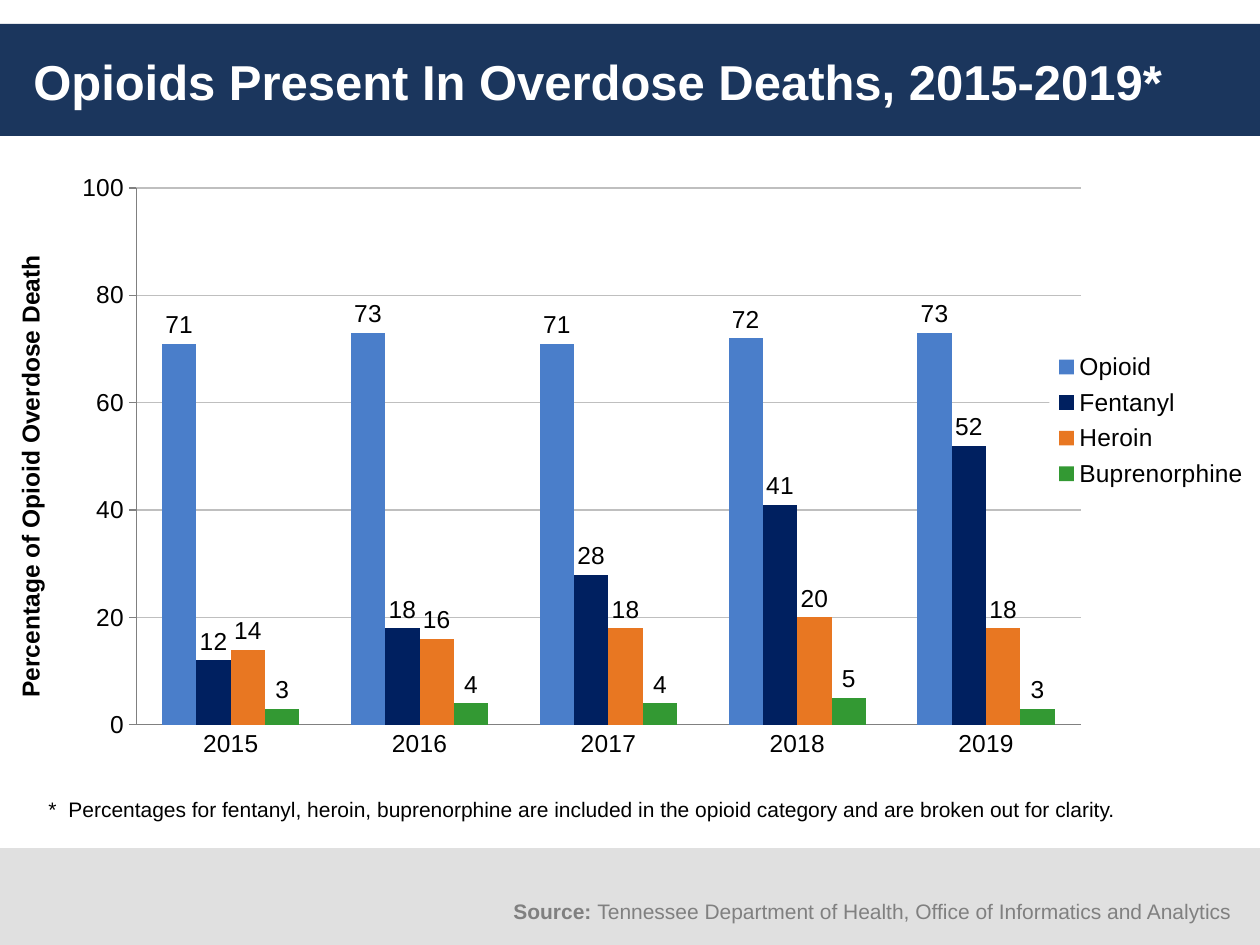
"""Build the slide on opioids present in overdose deaths."""
import pptx
import pptx.chart.data
import pptx.dml.color
import pptx.enum.chart
import pptx.enum.shapes
import pptx.enum.text
import pptx.oxml
import pptx.oxml.ns
import pptx.util

RGBColor = pptx.dml.color.RGBColor
ANCHOR = pptx.enum.text.MSO_ANCHOR
ALIGN = pptx.enum.text.PP_ALIGN
XL = pptx.enum.chart

NAVY = RGBColor(0x1B, 0x36, 0x5D)
PALE = RGBColor(0xE0, 0xE0, 0xE0)
WHITE = RGBColor(0xFF, 0xFF, 0xFF)
BLACK = RGBColor(0, 0, 0)
GRAY = RGBColor(0x80, 0x80, 0x80)
GRID = RGBColor(0xBF, 0xBF, 0xBF)

BANDS = [((0, 24, 1260, 112), NAVY), ((0, 848, 1260, 97), PALE)]
TEXTS = [
    {"box": (21, 24, 1218, 113), "size": 28, "color": WHITE, "anchor": ANCHOR.MIDDLE,
     "runs": [("Opioids Present In Overdose Deaths, 2015-2019*", True)]},
    {"box": (36, 790, 1103, 38), "size": 12, "color": BLACK, "hang": 20,
     "runs": [("*\tPercentages for fentanyl, heroin, buprenorphine are included in "
               "the opioid category and are broken out for clarity.", False)]},
    {"box": (9, 190, 55, 573), "size": 14, "color": BLACK, "align": ALIGN.CENTER,
     "vert": "vert270", "runs": [("Percentage of Opioid Overdose Death", True)]},
    {"box": (501, 892, 756, 38), "size": 12, "color": GRAY,
     "runs": [("Source: ", True),
              ("Tennessee Department of Health, Office of Informatics and Analytics", False)]},
]
YEARS = ["2015", "2016", "2017", "2018", "2019"]
SERIES = [
    ("Opioid", (71, 73, 71, 72, 73), RGBColor(0x4A, 0x7E, 0xCA)),
    ("Fentanyl", (12, 18, 28, 41, 52), RGBColor(0x00, 0x20, 0x60)),
    ("Heroin", (14, 16, 18, 20, 18), RGBColor(0xE8, 0x77, 0x22)),
    ("Buprenorphine", (3, 4, 4, 5, 3), RGBColor(0x33, 0x99, 0x33)),
]
CHART_BOX = (9, 165, 1249, 683)
PLOT_BOX = (136, 188, 944, 537)
LEGEND_BOX = (1050, 345, 204, 150)


def px(n):
    return pptx.util.Emu(n * 914400 // 126)


def style(obj, **values):
    for name, value in values.items():
        setattr(obj, name, value)


def add_band(s, box, color):
    sp = s.shapes.add_shape(pptx.enum.shapes.MSO_SHAPE.RECTANGLE, *map(px, box))
    sp.shadow.inherit = False
    sp.fill.solid()
    sp.fill.fore_color.rgb = color
    sp.line.fill.background()


def add_text(s, item):
    tf = s.shapes.add_textbox(*map(px, item["box"])).text_frame
    style(tf, word_wrap=True, vertical_anchor=item.get("anchor", ANCHOR.TOP))
    if "vert" in item:
        tf._txBody.bodyPr.set("vert", item["vert"])
    p = tf.paragraphs[0]
    p.alignment = item.get("align", ALIGN.LEFT)
    if "hang" in item:
        indent = px(item["hang"])
        pPr = p._p.get_or_add_pPr()
        pPr.set("marL", str(indent))
        pPr.set("indent", str(-indent))
    for text, bold in item["runs"]:
        r = p.add_run()
        r.text = text
        style(r.font, name="Arial", size=pptx.util.Pt(item["size"]), bold=bold)
        r.font.color.rgb = item["color"]


def set_layout(parent, index, box, target=""):
    for old in parent.findall(pptx.oxml.ns.qn("c:layout")):
        parent.remove(old)
    left, top, width, height = CHART_BOX
    parts = {"x": (box[0] - left) / width, "y": (box[1] - top) / height,
             "w": box[2] / width, "h": box[3] / height}
    modes = "".join(f'<c:{k}Mode val="edge"/>' for k in "xy")
    sizes = "".join(f'<c:{k} val="{v:.3f}"/>' for k, v in parts.items())
    parent.insert(index, pptx.oxml.parse_xml(
        f'<c:layout {pptx.oxml.ns.nsdecls("c")}><c:manualLayout>'
        f'{target}{modes}{sizes}</c:manualLayout></c:layout>'))


def add_chart(s):
    data = pptx.chart.data.CategoryChartData(number_format="0")
    data.categories = YEARS
    for name, values, _ in SERIES:
        data.add_series(name, values)
    chart = s.shapes.add_chart(XL.XL_CHART_TYPE.COLUMN_CLUSTERED,
                               *map(px, CHART_BOX), data).chart
    style(chart, has_title=False, has_legend=True)
    style(chart.font, name="Arial", size=pptx.util.Pt(14))
    chart.font.color.rgb = BLACK
    style(chart.legend, position=XL.XL_LEGEND_POSITION.RIGHT, include_in_layout=False)

    plot = chart.plots[0]
    style(plot, gap_width=150, overlap=0, vary_by_categories=False, has_data_labels=True)
    style(plot.data_labels, show_value=True, number_format="0",
          number_format_is_linked=False, position=XL.XL_LABEL_POSITION.OUTSIDE_END)
    for series, (_, _, color) in zip(plot.series, SERIES):
        series.format.fill.solid()
        series.format.fill.fore_color.rgb = color

    value, category = chart.value_axis, chart.category_axis
    style(value, minimum_scale=0, maximum_scale=100, major_unit=20,
          has_major_gridlines=True, major_tick_mark=XL.XL_TICK_MARK.OUTSIDE)
    style(value.tick_labels, number_format="0", number_format_is_linked=False)
    category.major_tick_mark = XL.XL_TICK_MARK.NONE
    for part, color in ((value, GRAY), (category, GRAY), (value.major_gridlines, GRID)):
        part.format.line.color.rgb = color
        part.format.line.width = pptx.util.Pt(0.75)

    set_layout(chart._chartSpace.chart.plotArea, 0, PLOT_BOX,
               '<c:layoutTarget val="inner"/>')
    legend = chart.legend._element
    set_layout(legend, 1, LEGEND_BOX)
    legend.find(pptx.oxml.ns.qn("c:overlay")).addnext(pptx.oxml.parse_xml(
        f'<c:spPr {pptx.oxml.ns.nsdecls("c", "a")}><a:solidFill>'
        f'<a:srgbClr val="{WHITE}"/></a:solidFill></c:spPr>'))


def main():
    prs = pptx.Presentation()
    style(prs, slide_width=px(1260), slide_height=px(945))
    s = prs.slides.add_slide(prs.slide_layouts[6])
    for box, color in BANDS:
        add_band(s, box, color)
    add_chart(s)
    for item in TEXTS:
        add_text(s, item)
    prs.save("out.pptx")


if __name__ == "__main__":
    main()
